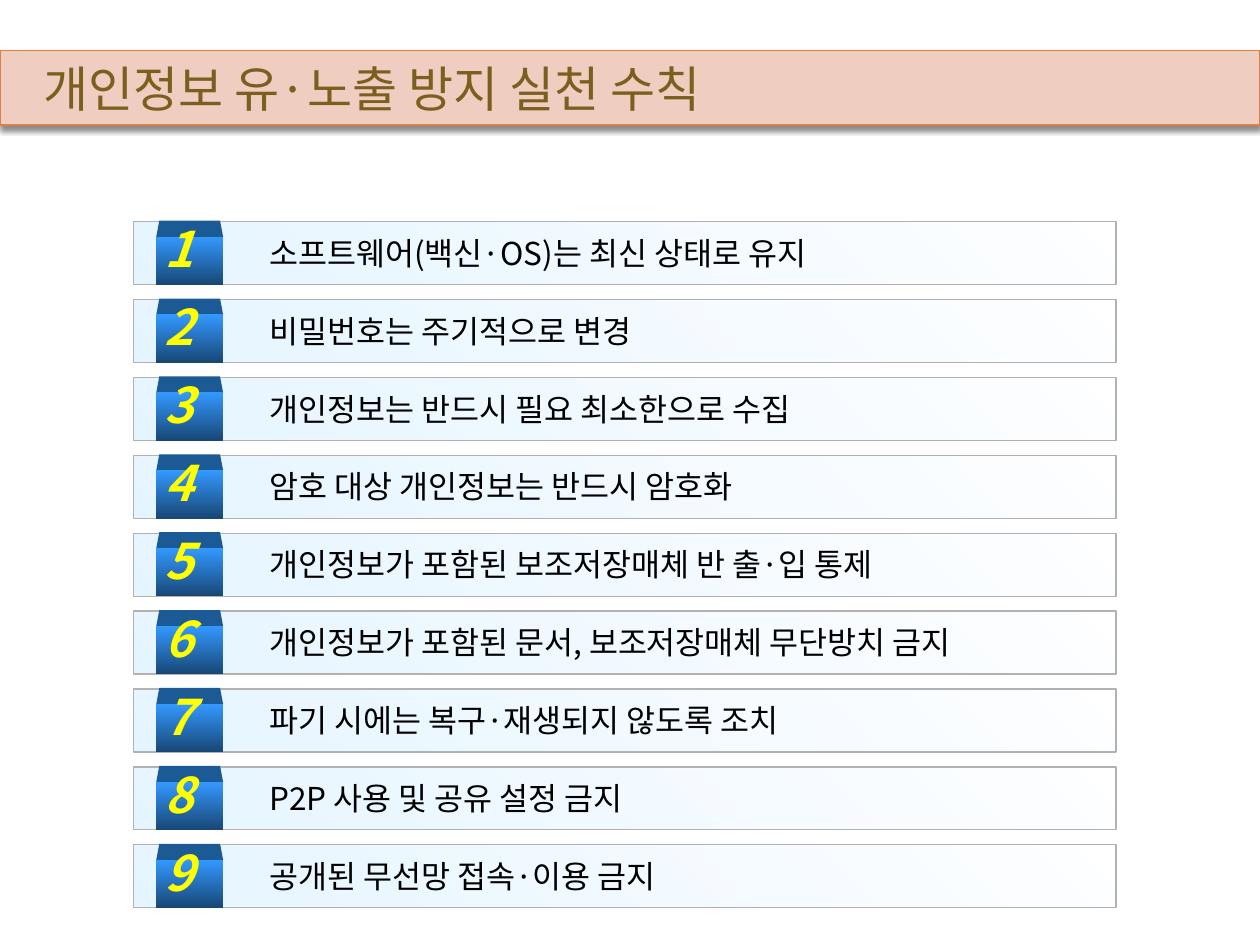
"""Build a slide listing nine numbered rules for preventing personal data leaks."""
from lxml import etree
from pptx import Presentation
from pptx.dml.color import RGBColor
from pptx.enum.shapes import MSO_SHAPE
from pptx.enum.text import MSO_ANCHOR, MSO_AUTO_SIZE, PP_ALIGN
from pptx.oxml import parse_xml
from pptx.oxml.ns import qn
from pptx.util import Cm, Pt

RECTANGLE, TRAPEZOID = MSO_SHAPE.RECTANGLE, MSO_SHAPE.TRAPEZOID
MIDDLE, LEFT = MSO_ANCHOR.MIDDLE, PP_ALIGN.LEFT
GROW, FIXED = MSO_AUTO_SIZE.SHAPE_TO_FIT_TEXT, MSO_AUTO_SIZE.NONE
FONT = "Noto Sans CJK KR"
COLORS = {
    "title_fill": "EFCDC1", "title_line": "DD8047", "title_text": "7C5F1E",
    "bar_start": "CCECFF", "bar_end": "FFFFFF", "bar_line": "B2B2B2",
    "badge_start": "3399FF", "badge_end": "184776", "badge_top": "1C5A96",
    "number": "FFFF00", "text": "000000",
}
SHADOW = (
    '<a:effectLst xmlns:a="http://schemas.openxmlformats.org/drawingml/2006/main">'
    '<a:outerShdw blurRad="{blur}" dist="{distance}" dir="{direction}" algn="tl" rotWithShape="0">'
    '<a:srgbClr val="000000"><a:alpha val="{alpha}"/></a:srgbClr>'
    '</a:outerShdw></a:effectLst>'
)
RULES = [
    ("소프트웨어(백신·OS)는 최신 상태로 유지", 12.57),
    ("비밀번호는 주기적으로 변경", 8.64),
    ("개인정보는 반드시 필요 최소한으로 수집", 12.27),
    ("암호 대상 개인정보는 반드시 암호화", 11),
    ("개인정보가 포함된 보조저장매체 반 출·입 통제", 14.4),
    ("개인정보가 포함된 문서, 보조저장매체 무단방치 금지", 16.13),
    ("파기 시에는 복구·재생되지 않도록 조치", 12.27),
    ("P2P 사용 및 공유 설정 금지", 8.46),
    ("공개된 무선망 접속·이용 금지", 9.5),
]
FIRST_TOP, ROW_PITCH = 4.47, 1.57


def add_run(text_frame, text, size, color):
    run = text_frame.paragraphs[0].add_run()
    run.text = text
    run.font.size = Pt(size)
    run.font.color.rgb = RGBColor.from_string(COLORS[color])
    run.font.name = FONT
    etree.SubElement(run.font._element, qn("a:ea"), typeface=FONT)
    return run


def fill_gradient(shape, start, end, angle):
    shape.shadow.inherit = False
    shape.fill.gradient()
    shape.fill.gradient_angle = angle
    for stop, color in zip(shape.fill.gradient_stops, (start, end)):
        stop.color.rgb = RGBColor.from_string(COLORS[color])


presentation = Presentation()
presentation.slide_width, presentation.slide_height = Cm(25.4), Cm(19.05)
slide = presentation.slides.add_slide(presentation.slide_layouts[5])

title = slide.shapes.title
title.left, title.top, title.width, title.height = Cm(0), Cm(1.02), Cm(25.4), Cm(1.5)
title.fill.solid()
title.fill.fore_color.rgb = RGBColor.from_string(COLORS["title_fill"])
title.line.color.rgb = RGBColor.from_string(COLORS["title_line"])
title.line.width = Pt(0.79)
title._element.spPr.append(parse_xml(SHADOW.format(
    blur=Pt(3), distance=Pt(2.4), direction=5400000, alpha=45000)))
title.text_frame.auto_size = FIXED
title.text_frame.vertical_anchor = MIDDLE
title.text_frame.margin_left = Cm(0.88)
title.text_frame.paragraphs[0].alignment = LEFT
add_run(title.text_frame, "개인정보 유·노출 방지 실천 수칙", 28, "title_text")

for index, (rule, width) in enumerate(RULES):
    top = FIRST_TOP + index * ROW_PITCH

    bar = slide.shapes.add_shape(RECTANGLE, Cm(2.69), Cm(top), Cm(19.81), Cm(1.27))
    fill_gradient(bar, "bar_start", "bar_end", 45)
    for color in bar._element.spPr.iter(qn("a:srgbClr")):
        etree.SubElement(color, qn("a:alpha"), val="49000")
    bar.line.color.rgb = RGBColor.from_string(COLORS["bar_line"])
    bar.line.width = Pt(0.75)

    badge_top = slide.shapes.add_shape(TRAPEZOID, Cm(3.15), Cm(top - 0.02), Cm(1.35), Cm(0.33))
    badge_top.adjustments[0] = 0.19
    badge_top.shadow.inherit = False
    badge_top.fill.solid()
    badge_top.fill.fore_color.rgb = RGBColor.from_string(COLORS["badge_top"])
    badge_top.line.fill.background()

    badge = slide.shapes.add_shape(RECTANGLE, Cm(3.15), Cm(top + 0.3), Cm(1.35), Cm(0.97))
    fill_gradient(badge, "badge_start", "badge_end", 270)
    badge.line.fill.background()

    rule_box = slide.shapes.add_textbox(Cm(5.18), Cm(top + 0.12), Cm(width), Cm(1.02))
    rule_box.text_frame.word_wrap = False
    rule_box.text_frame.auto_size = GROW
    add_run(rule_box.text_frame, rule, 18, "text")

    number_box = slide.shapes.add_textbox(Cm(3.07), Cm(top - 0.18), Cm(1.42), Cm(1.45))
    number_box.text_frame.word_wrap = True
    number_box.text_frame.auto_size = GROW
    number = add_run(number_box.text_frame, str(index + 1), 28, "number")
    number.font.bold = number.font.italic = True
    number.font._element.find(qn("a:latin")).addprevious(parse_xml(SHADOW.format(
        blur=Pt(3), distance=Pt(3), direction=2700000, alpha=43000)))

presentation.save("out.pptx")
